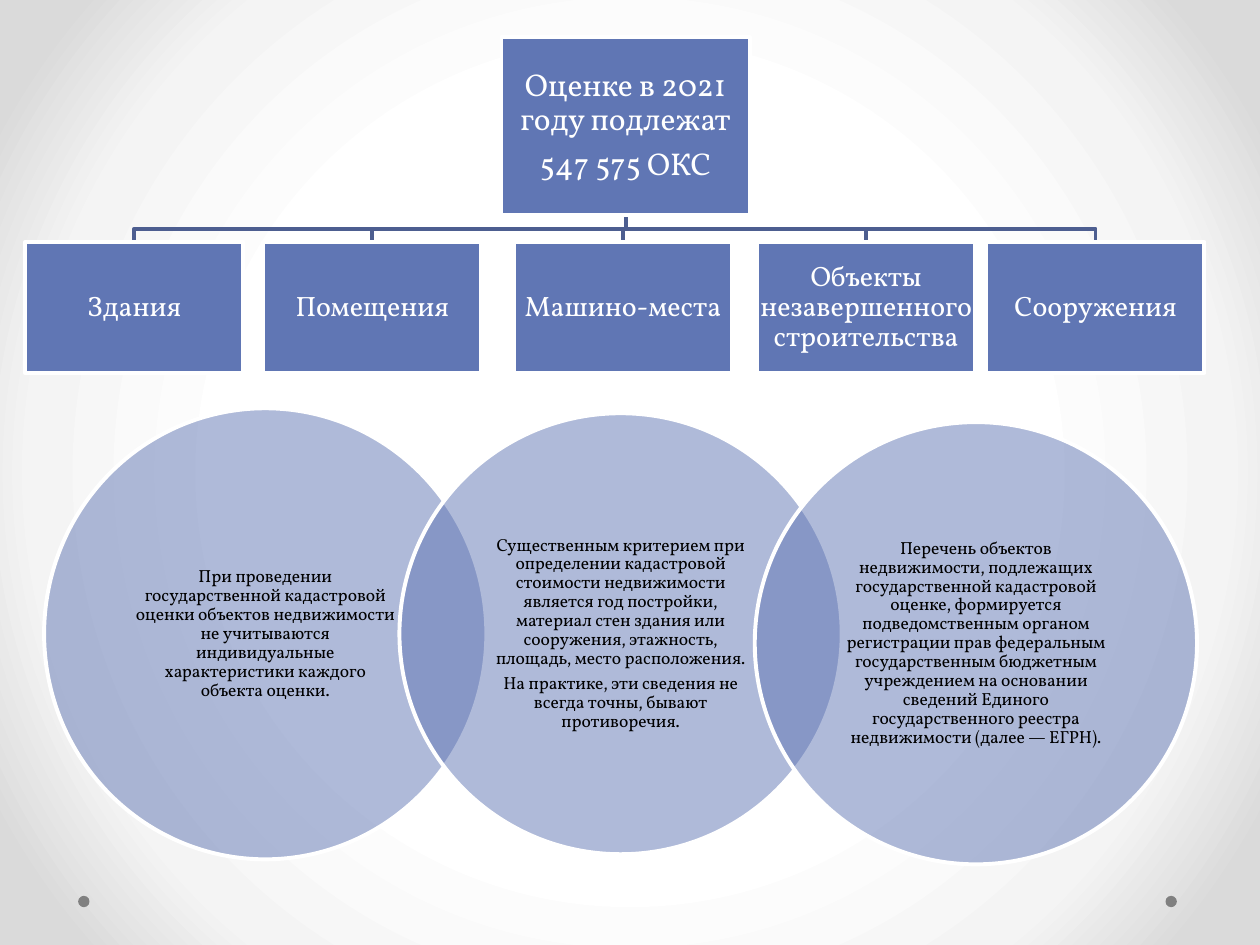
from pptx import Presentation
from pptx.dml.color import RGBColor
from pptx.enum.shapes import MSO_SHAPE
from pptx.enum.text import MSO_ANCHOR, MSO_AUTO_SIZE, PP_ALIGN
from pptx.oxml import parse_xml
from pptx.oxml.ns import nsdecls, qn
from pptx.util import Inches, Pt

RECTANGLE, OVAL = MSO_SHAPE.RECTANGLE, MSO_SHAPE.OVAL
MIDDLE, CENTER, NO_FIT = MSO_ANCHOR.MIDDLE, PP_ALIGN.CENTER, MSO_AUTO_SIZE.NONE

BLUE = RGBColor(0x60, 0x76, 0xB4)
DARK_BLUE = RGBColor(0x4D, 0x5E, 0x90)
WHITE = RGBColor(0xFF, 0xFF, 0xFF)
BLACK = RGBColor(0x00, 0x00, 0x00)
GRAY = RGBColor(0x80, 0x80, 0x80)
LIGHT_GRAY = RGBColor(0xF4, 0xF4, 0xF4)
EDGE_GRAY = RGBColor(0xDA, 0xDA, 0xDA)

FONT = "Vollkorn"
LINE_WIDTH = Pt(2.25)

# Root box and the row of object types below it
ROOT_LEFT, ROOT_TOP, ROOT_WIDTH, ROOT_HEIGHT = 3.98, 0.29, 1.97, 1.42
ROOT_TEXT = ["Оценке в 2021 году подлежат", "547 575 ОКС"]
TYPE_TOP, TYPE_WIDTH, TYPE_HEIGHT = 1.92, 1.73, 1.04
OBJECT_TYPES = [
    (0.2, "Здания"),
    (2.09, "Помещения"),
    (4.08, "Машино-места"),
    (6.01, "Объекты незавершенного строительства"),
    (7.83, "Сооружения"),
]

# Overlapping circles: left, top, height, paragraphs
CIRCLE_WIDTH = 3.51
CIRCLES = [
    (0.35, 3.24, 3.58, [
        "При проведении государственной кадастровой оценки объектов "
        "недвижимости не учитываются индивидуальные характеристики каждого "
        "объекта оценки."]),
    (3.17, 3.28, 3.5, [
        "Существенным критерием при определении кадастровой стоимости "
        "недвижимости является год постройки, материал стен здания "
        "или сооружения, этажность, площадь, место расположения.",
        "На практике, эти сведения не всегда точны, бывают противоречия."]),
    (5.99, 3.35, 3.51, [
        "Перечень объектов недвижимости, подлежащих государственной "
        "кадастровой оценке, формируется подведомственным органом "
        "регистрации прав федеральным государственным бюджетным учреждением "
        "на основании сведений Единого государственного реестра "
        "недвижимости (далее — ЕГРН)."]),
]


def set_background(page):
    """Fill the page with a gradient that spreads from its centre."""
    page.background.fill.gradient()
    stops = "".join(
        f'<a:gs pos="{percent * 1000}"><a:srgbClr val="{color}"/></a:gs>'
        for percent, color in ((50, WHITE), (76, LIGHT_GRAY), (92, EDGE_GRAY)))
    gradient = parse_xml(
        f'<a:gradFill {nsdecls("a")} rotWithShape="1"><a:gsLst>{stops}</a:gsLst>'
        '<a:path path="circle"><a:fillToRect l="50000" t="50000" r="50000" '
        'b="50000"/></a:path></a:gradFill>')
    plain = page.element.find(".//" + qn("a:gradFill"))
    plain.getparent().replace(plain, gradient)


def set_fill(shape, color, opacity=100):
    shape.fill.solid()
    shape.fill.fore_color.rgb = color
    if opacity < 100:
        color_node = shape.fill._xPr.find(".//" + qn("a:srgbClr"))
        color_node.append(parse_xml(
            f'<a:alpha {nsdecls("a")} val="{opacity * 1000}"/>'))


def set_line(shape, color):
    shape.line.color.rgb = color
    shape.line.width = LINE_WIDTH


def set_text(shape, paragraphs, size=16, color=WHITE, side_margin=0.01):
    """Write centred paragraphs into a shape."""
    frame = shape.text_frame
    frame.word_wrap = True
    frame.auto_size = NO_FIT
    frame.vertical_anchor = MIDDLE
    frame.margin_left = frame.margin_right = Inches(side_margin)
    frame.margin_top = frame.margin_bottom = Inches(0.01)
    for index, text in enumerate(paragraphs):
        para = frame.add_paragraph() if index else frame.paragraphs[0]
        para.alignment = CENTER
        para.line_spacing = 0.9
        para.space_before = Pt(0)
        para.space_after = Pt(size * 0.35)
        span = para.add_run()
        span.text = text
        span.font.name = FONT
        span.font.size = Pt(size)
        span.font.color.rgb = color


def add_figure(page, kind, left, top, width, height, color, opacity=100):
    shape = page.shapes.add_shape(
        kind, Inches(left), Inches(top), Inches(width), Inches(height))
    shape.shadow.inherit = False
    set_fill(shape, color, opacity)
    return shape


def add_branch(page, target):
    """Draw a stepped line from the root box to the centre of a type box."""
    source = ROOT_LEFT + ROOT_WIDTH / 2
    bottom = ROOT_TOP + ROOT_HEIGHT
    bend = (bottom + TYPE_TOP) / 2
    builder = page.shapes.build_freeform(Inches(source), Inches(bottom))
    builder.add_line_segments(
        [(Inches(x), Inches(y))
         for x, y in ((source, bend), (target, bend), (target, TYPE_TOP))],
        close=False)
    branch = builder.convert_to_shape()
    branch.shadow.inherit = False
    branch.fill.background()
    set_line(branch, DARK_BLUE)


def add_root(page):
    """Use the title as the root box, in front of the branches."""
    root = page.shapes.title
    root.left, root.top = Inches(ROOT_LEFT), Inches(ROOT_TOP)
    root.width, root.height = Inches(ROOT_WIDTH), Inches(ROOT_HEIGHT)
    set_fill(root, BLUE)
    set_line(root, WHITE)
    set_text(root, ROOT_TEXT, size=18)
    root.element.getparent().append(root.element)


def main():
    deck = Presentation()
    deck.slide_width, deck.slide_height = Inches(10), Inches(7.5)
    page = deck.slides.add_slide(deck.slide_layouts[5])
    set_background(page)

    # Corner dots
    for left in (0.62, 9.25):
        dot = add_figure(page, OVAL, left, 7.11, 0.09, 0.09, GRAY)
        dot.line.fill.background()

    # Circles with explanations
    for left, top, height, paragraphs in CIRCLES:
        circle = add_figure(page, OVAL, left, top, CIRCLE_WIDTH, height, BLUE,
                            opacity=50)
        set_line(circle, WHITE)
        set_text(circle, paragraphs, size=10, color=BLACK, side_margin=0.19)

    # Hierarchy: branches, root, object types
    for left, _ in reversed(OBJECT_TYPES):
        add_branch(page, left + TYPE_WIDTH / 2)
    add_root(page)
    for left, label in OBJECT_TYPES:
        box = add_figure(page, RECTANGLE, left, TYPE_TOP, TYPE_WIDTH,
                         TYPE_HEIGHT, BLUE)
        set_line(box, WHITE)
        set_text(box, [label])

    deck.save("out.pptx")


if __name__ == "__main__":
    main()
